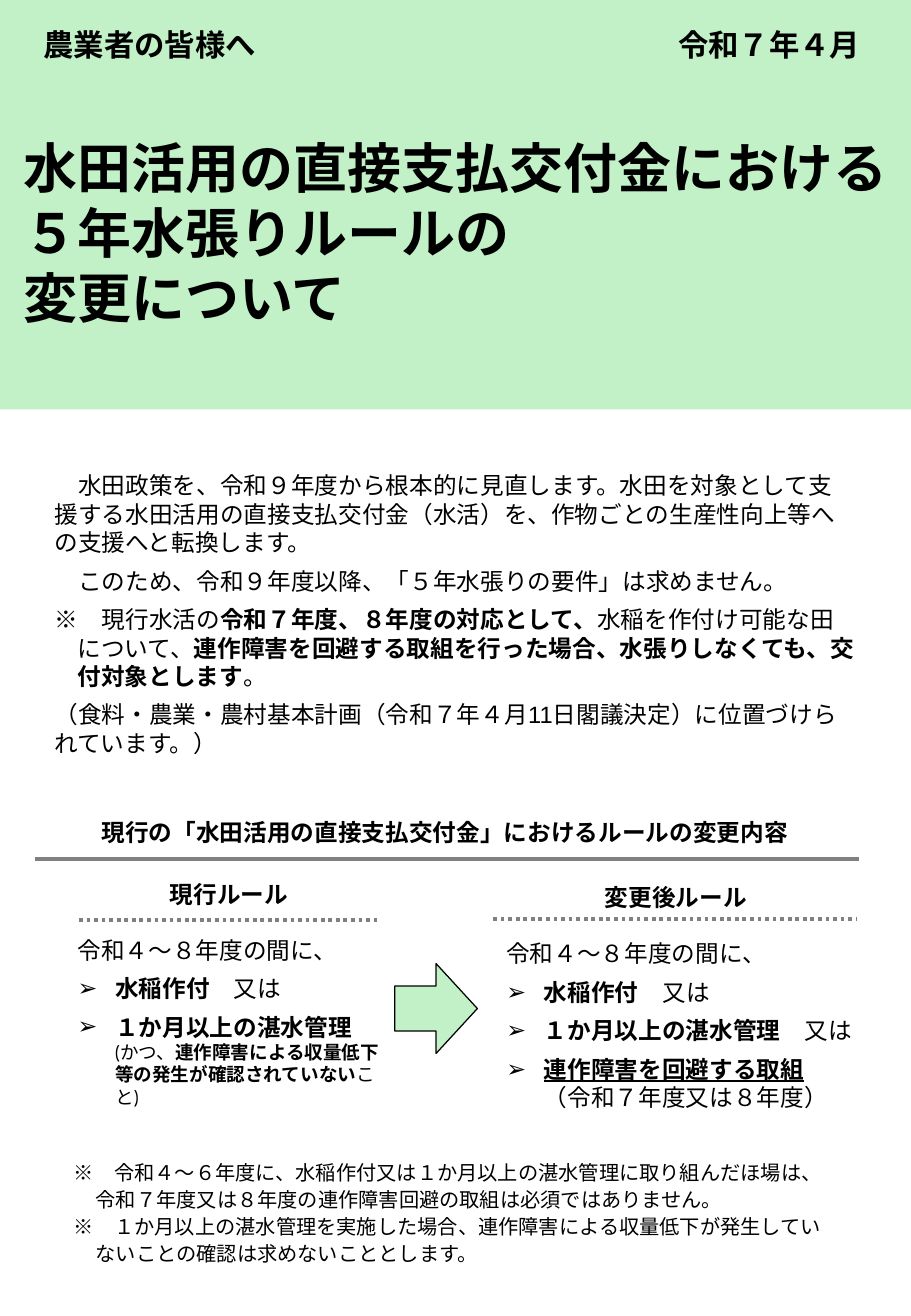
from copy import deepcopy

from lxml.etree import SubElement
from pptx import Presentation
from pptx.dml.color import RGBColor
from pptx.enum.dml import MSO_LINE
from pptx.enum.lang import MSO_LANGUAGE_ID as LANG
from pptx.enum.shapes import MSO_CONNECTOR, MSO_SHAPE
from pptx.enum.text import MSO_ANCHOR, MSO_AUTO_SIZE, PP_ALIGN as ALIGN
from pptx.oxml.ns import qn
from pptx.util import Inches, Pt

COLORS = {"green": "C2F1C8", "text": "000000", "rule": "808080"}
BOLD = {"bold": True}
SMALL = {"size": Pt(11)}
ARIAL = {"name": "Arial"}
AFTER = {"space_after": Pt(6)}


def color(name):
    return RGBColor.from_string(COLORS[name])


def write(sp, paragraphs, size, anchor=MSO_ANCHOR.TOP, font="Cabin", **base):
    """Fill a shape with (paragraph format, runs); a run is (text, font format)."""
    tf = sp.text_frame
    tf.word_wrap = True
    tf.auto_size = MSO_AUTO_SIZE.SHAPE_TO_FIT_TEXT
    tf.vertical_anchor = anchor
    for i, (layout, runs) in enumerate(paragraphs):
        p = tf.paragraphs[0] if i == 0 else tf.add_paragraph()
        layout = dict(layout)
        hanging = layout.pop("hanging", 0)
        bullet = layout.pop("bullet", None)
        for key, value in layout.items():
            setattr(p, key, value)
        if hanging:
            pPr = p._p.get_or_add_pPr()
            pPr.set("marL", str(Inches(hanging)))
            pPr.set("indent", str(-Inches(hanging)))
        if bullet:
            SubElement(pPr, qn("a:buFont")).set("typeface", "Arial")
            SubElement(pPr, qn("a:buChar")).set("char", bullet)
        for text, style in runs:
            if text.startswith("\n"):
                p.add_line_break()
                p._p[-1].append(deepcopy(r._r.rPr))
            r = p.add_run()
            r.text = text.lstrip("\n")
            style = {"name": font, "size": Pt(size), "language_id": LANG.JAPANESE, **base, **style}
            for key, value in style.items():
                setattr(r.font, key, value)
            r.font.color.rgb = color("text")
            latin = r._r.rPr.find(qn("a:latin"))
            ea = deepcopy(latin)
            ea.tag = qn("a:ea")
            latin.addnext(ea)


prs = Presentation()
prs.slide_width, prs.slide_height = Inches(7.5), Inches(10.83)
s = prs.slides.add_slide(prs.slide_layouts[5])
shapes = s.shapes

# Green header band behind the title
band = shapes.add_shape(MSO_SHAPE.RECTANGLE, 0, 0, prs.slide_width, Inches(3.37))
arrow = shapes.add_shape(MSO_SHAPE.RIGHT_ARROW, Inches(3.25), Inches(7.93), Inches(0.68), Inches(0.74))
for sp in (band, arrow):
    sp.shadow.inherit = False
    sp.fill.solid()
    sp.fill.fore_color.rgb = color("green")
band.line.fill.background()
arrow.line.color.rgb = color("text")
arrow.line.width = Pt(0.75)
shapes._spTree.insert(2, band._element)

title = shapes.title
title.left, title.top, title.width, title.height = (Inches(v) for v in (0.09, 1.06, 7.33, 1.72))
title_lines = ["水田活用の直接支払交付金における", "５年水張りルールの", "変更について"]
write(title, [({"alignment": ALIGN.LEFT}, [(t, {})]) for t in title_lines], 32, bold=True)

# Single-line labels: text, position, size, alignment, anchor
labels = [
    ("農業者の皆様へ", (0.26, 0.17, 1.99, 0.4), 18, ALIGN.LEFT, MSO_ANCHOR.TOP),
    ("令和７年４月", (5.19, 0.17, 1.99, 0.4), 18, ALIGN.RIGHT, MSO_ANCHOR.TOP),
    ("現行の「水田活用の直接支払交付金」におけるルールの変更内容", (0.35, 6.68, 6.63, 0.34), 14,
     ALIGN.CENTER, MSO_ANCHOR.MIDDLE),
    ("現行ルール", (1.03, 7.19, 1.71, 0.34), 14, ALIGN.CENTER, MSO_ANCHOR.MIDDLE),
    ("変更後ルール", (4.71, 7.21, 1.71, 0.34), 14, ALIGN.CENTER, MSO_ANCHOR.MIDDLE),
]
for text, box, size, alignment, anchor in labels:
    sp = shapes.add_textbox(*(Inches(v) for v in box))
    write(sp, [({"alignment": alignment}, [(text, {})])], size, anchor, bold=True)

policy = [
    (AFTER, [("　水田政策を、令和９年度から根本的に見直します。水田を対象として支援する水田活用の"
              "直接支払交付金（水活）を、作物ごとの生産性向上等への支援へと転換します。", {})]),
    (AFTER, [("　このため、令和９年度以降、「５年水張りの要件」は求めません。", {})]),
    ({**AFTER, "hanging": 0.19}, [
        ("※　現行水活の", {}),
        ("令和７年度、８年度の対応として、", BOLD),
        ("水稲を作付け可能な田について、", {}),
        ("連作障害を回避する取組を行った場合、水張りしなくても、交付対象とします", BOLD),
        ("。", {})]),
    (AFTER, [("（食料・農業・農村基本計画（令和７年４月", {}), ("11", ARIAL),
             ("日閣議決定）に位置づけられています。）", {})]),
]

item = {**AFTER, "hanging": 0.31, "bullet": "➢"}
shared_rules = [
    (AFTER, [("令和４～８年度の間に、", {})]),
    (item, [("水稲作付", BOLD), ("　又は", {})]),
]
current_rules = shared_rules + [
    (item, [("１か月以上の湛水管理", BOLD), ("\n(かつ、", SMALL),
            ("連作障害による収量低下等の発生が確認されていない", {**SMALL, **BOLD}), ("こと)", SMALL)]),
]
changed_rules = shared_rules + [
    (item, [("１か月以上の湛水管理　", BOLD), ("又は", {})]),
    (item, [("連作障害を回避する取組", {**BOLD, "underline": True}), ("\n（令和７年度又は８年度）", {})]),
]

note = {"hanging": 0.18, "line_spacing": Pt(16)}
notes = [
    (note, [("※　令和４～６年度に、水稲作付又は１か月以上の湛水管理に取り組んだほ場は、"
             "令和７年度又は８年度の連作障害回避の取組は必須ではありません。", {})]),
    (note, [("※　１か月以上の湛水管理を実施した場合、連作障害による収量低下が発生していない"
             "ことの確認は求めないこととします。", {})]),
]

for paragraphs, box, size, font in [
    (policy, (0.35, 3.83, 6.79, 2.47), 14, "Cabin"),
    (current_rules, (0.54, 7.65, 2.7, 1.53), 14, "Cabin"),
    (changed_rules, (4.07, 7.68, 3.12, 1.53), 14, "Cabin"),
    (notes, (0.51, 9.48, 6.45, 0.99), 12, "Arial"),
]:
    write(shapes.add_textbox(*(Inches(v) for v in box)), paragraphs, size, font=font)

# Section rule and the dotted rules under the column heads
for x1, x2, y, dash in [
    (0.29, 7.07, 7.07, None),
    (0.65, 3.12, 7.57, MSO_LINE.ROUND_DOT),
    (4.06, 7.05, 7.56, MSO_LINE.ROUND_DOT),
]:
    rule = shapes.add_connector(MSO_CONNECTOR.STRAIGHT, Inches(x1), Inches(y), Inches(x2), Inches(y))
    rule.line.color.rgb = color("rule")
    rule.line.width = Pt(2.25)
    rule.line.dash_style = dash
    SubElement(rule._element.spPr, qn("a:effectLst"))

prs.save("out.pptx")
